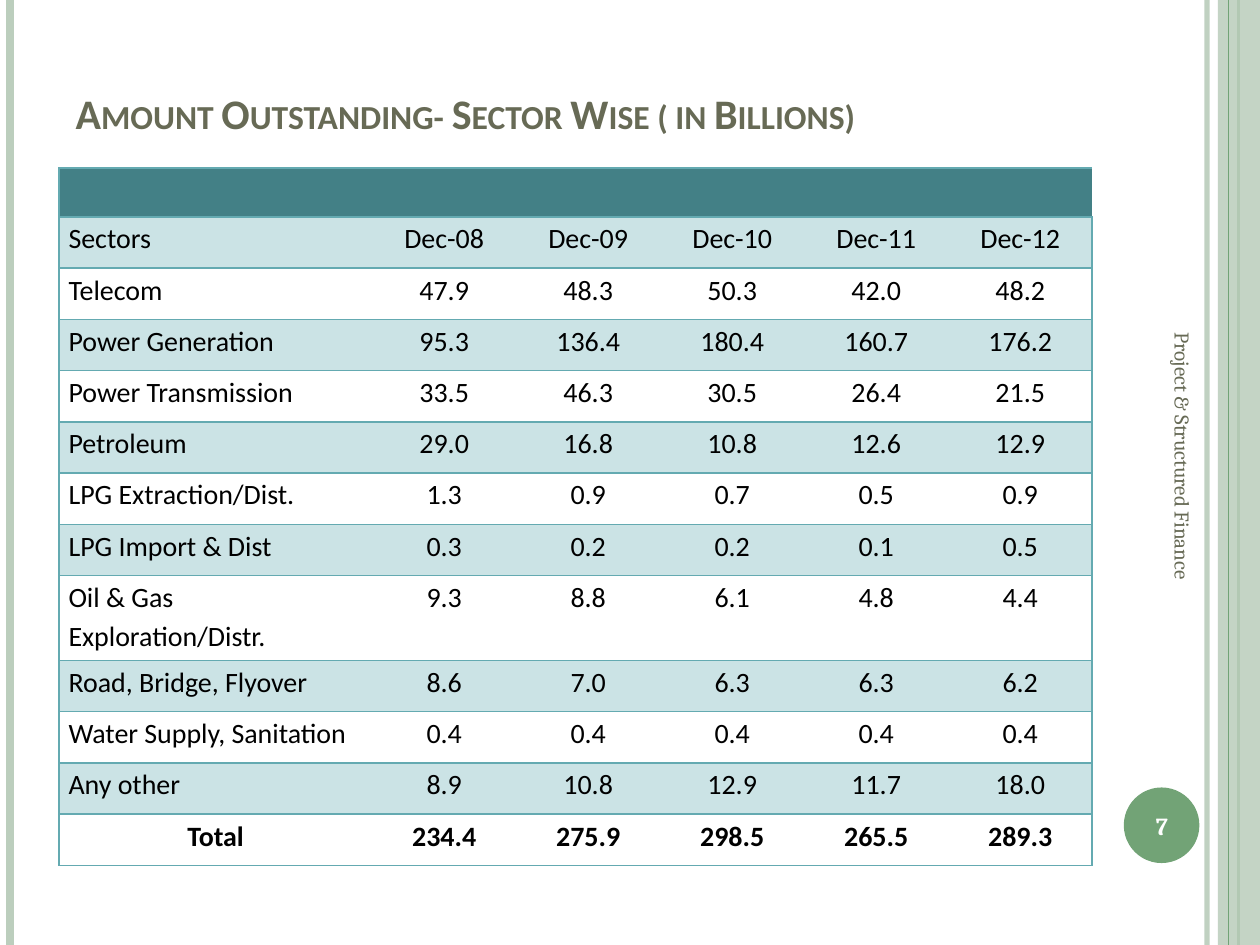
from lxml.etree import SubElement as Sub, Element
from pptx import Presentation
from pptx.dml.color import RGBColor
from pptx.enum.shapes import MSO_CONNECTOR as Link, MSO_SHAPE as Form
from pptx.enum.text import MSO_ANCHOR as Anchor, MSO_AUTO_SIZE as Fit, PP_ALIGN as Align
from pptx.oxml.ns import qn
from pptx.util import Pt

PALE = RGBColor(0xBC, 0xCE, 0xBD)
GREEN = RGBColor(0x72, 0xA3, 0x76)
OLIVE = RGBColor(0x67, 0x6A, 0x55)
TEAL = RGBColor(0x43, 0x80, 0x86)
BAND = RGBColor(0xCB, 0xE3, 0xE5)
EDGE = RGBColor(0x64, 0xAA, 0xB1)
WHITE = RGBColor(0xFF, 0xFF, 0xFF)
BLACK = RGBColor(0, 0, 0)

HIGH = 540
RULES = [(689.8, PALE, 3, 93), (5.8, PALE, 4.5, 100),
         (707.8, GREEN, 1.5, 100), (702, GREEN, 0.75, 100)]
ROWS = [
    ("Sectors", "Dec-08", "Dec-09", "Dec-10", "Dec-11", "Dec-12"),
    ("Telecom", "47.9", "48.3", "50.3", "42.0", "48.2"),
    ("Power Generation", "95.3", "136.4", "180.4", "160.7", "176.2"),
    ("Power Transmission", "33.5", "46.3", "30.5", "26.4", "21.5"),
    ("Petroleum", "29.0", "16.8", "10.8", "12.6", "12.9"),
    ("LPG Extraction/Dist.", "1.3", "0.9", "0.7", "0.5", "0.9"),
    ("LPG Import & Dist", "0.3", "0.2", "0.2", "0.1", "0.5"),
    ("Oil & Gas Exploration/Distr.", "9.3", "8.8", "6.1", "4.8", "4.4"),
    ("Road, Bridge, Flyover", "8.6", "7.0", "6.3", "6.3", "6.2"),
    ("Water Supply, Sanitation", "0.4", "0.4", "0.4", "0.4", "0.4"),
    ("Any other", "8.9", "10.8", "12.9", "11.7", "18.0"),
    ("Total", "234.4", "275.9", "298.5", "265.5", "289.3"),
]


def fade(shape, part):
    """Make the colours of a shape partly opaque, in percent."""
    for tone in shape.element.spPr.iter(qn("a:srgbClr")):
        Sub(tone, qn("a:alpha"), val=str(part * 1000))


def style(frame, face, size, tone, bold=False, align=Align.LEFT):
    """Format every paragraph and run of a text frame."""
    for para in frame.paragraphs:
        para.alignment = align
        for run in para.runs:
            font = run.font
            font.name, font.size, font.bold = face, Pt(size), bold
            font.color.rgb = tone


def add_rule(slide, x, tone, width, part):
    """Draw a full-height vertical line."""
    rule = slide.shapes.add_connector(Link.STRAIGHT, Pt(x), 0, Pt(x), Pt(HIGH))
    rule.line.color.rgb = tone
    rule.line.width = Pt(width)
    if part < 100:
        fade(rule, part)
    Sub(rule.element.spPr, qn("a:effectLst"))


def add_form(slide, form, box, tone):
    """Draw a plain filled shape."""
    shape = slide.shapes.add_shape(form, *map(Pt, box))
    shape.shadow.inherit = False
    shape.fill.solid()
    shape.fill.fore_color.rgb = tone
    shape.line.fill.background()
    return shape


def add_note(slide, text, box, *look, **more):
    """Add a text box with its text centred in height."""
    note = slide.shapes.add_textbox(*map(Pt, box))
    frame = note.text_frame
    frame.word_wrap = True
    frame.vertical_anchor = Anchor.MIDDLE
    frame.text = text
    style(frame, *look, **more)
    return note


def set_title(slide, text):
    """Place and format the title."""
    title = slide.shapes.title
    title.left, title.top, title.width, title.height = map(Pt, (36, 21.6, 588, 90))
    frame = title.text_frame
    frame.auto_size = Fit.NONE
    frame.vertical_anchor = Anchor.BOTTOM
    frame.margin_bottom = Pt(33)
    frame.text = text
    style(frame, "Calibri", 24, OLIVE, bold=True)
    for run in frame.paragraphs[0].runs:
        run.font._element.set("cap", "small")


def set_edges(cell, first, last):
    """Rule a cell above and below, and at the outer sides of the table."""
    sides = {"a:lnL": first, "a:lnR": last, "a:lnT": True, "a:lnB": True}
    props = cell._tc.get_or_add_tcPr()
    for spot, (tag, shown) in enumerate(sides.items()):
        line = Element(qn(tag), w=str(Pt(1)))
        if shown:
            Sub(Sub(line, qn("a:solidFill")), qn("a:srgbClr"), val=str(EDGE))
        else:
            Sub(line, qn("a:noFill"))
        props.insert(spot, line)


def fill_cell(cell, text, align, bold):
    """Write the text of a table cell."""
    frame = cell.text_frame
    frame.text = text
    style(frame, "Calibri", 16, BLACK, bold, align)
    frame.paragraphs[0].line_spacing = 1.15


def add_grid(slide):
    """Add the table of sectors under a plain header band."""
    count, wide = len(ROWS) + 1, len(ROWS[0])
    grid = slide.shapes.add_table(count, wide, *map(Pt, (33.8, 96, 590.4, 399.4))).table
    grid.first_row = grid.horz_banding = False
    for c, col in enumerate(grid.columns):
        col.width = Pt(82.3 if c else 178.9)
    for r, row in enumerate(grid.rows):
        head, total = r == 0, r == count - 1
        label = "" if head else ROWS[r - 1][0]
        row.height = Pt(28 if head else 48.5 if label.startswith("Oil") else 29.3)
        for c, cell in enumerate(row.cells):
            cell.margin_left = cell.margin_right = Pt(5.4)
            cell.margin_top = cell.margin_bottom = 0
            if head or r % 2:
                cell.fill.solid()
                cell.fill.fore_color.rgb = TEAL if head else BAND
            else:
                cell.fill.background()
            set_edges(cell, c == 0, c == wide - 1)
            if not head:
                align = Align.CENTER if c or total else Align.LEFT
                fill_cell(cell, ROWS[r - 1][c], align, total)
    grid.cell(0, 0).merge(grid.cell(0, wide - 1))


def main():
    """Build the slide and save it."""
    deck = Presentation()
    deck.slide_width, deck.slide_height = Pt(720), Pt(HIGH)
    slide = deck.slides.add_slide(deck.slide_layouts[5])
    for rule in RULES[:3]:
        add_rule(slide, *rule)
    fade(add_form(slide, Form.RECTANGLE, (696, 0, 24, HIGH), PALE), 87)
    add_rule(slide, *RULES[3])
    add_form(slide, Form.OVAL, (642.2, 450, 43.2, 43.2), GREEN)
    set_title(slide, "Amount Outstanding- Sector Wise ( in Billions)")
    add_note(slide, "7", (640, 451.2, 48, 41), "Cambria", 14, WHITE,
             bold=True, align=Align.CENTER)
    side = add_note(slide, "Project & Structured Finance", (550, 294.5, 252, 28.8),
                    "Cambria", 12, OLIVE)
    side.rotation = 90
    add_grid(slide)
    deck.save("out.pptx")


if __name__ == "__main__":
    main()
